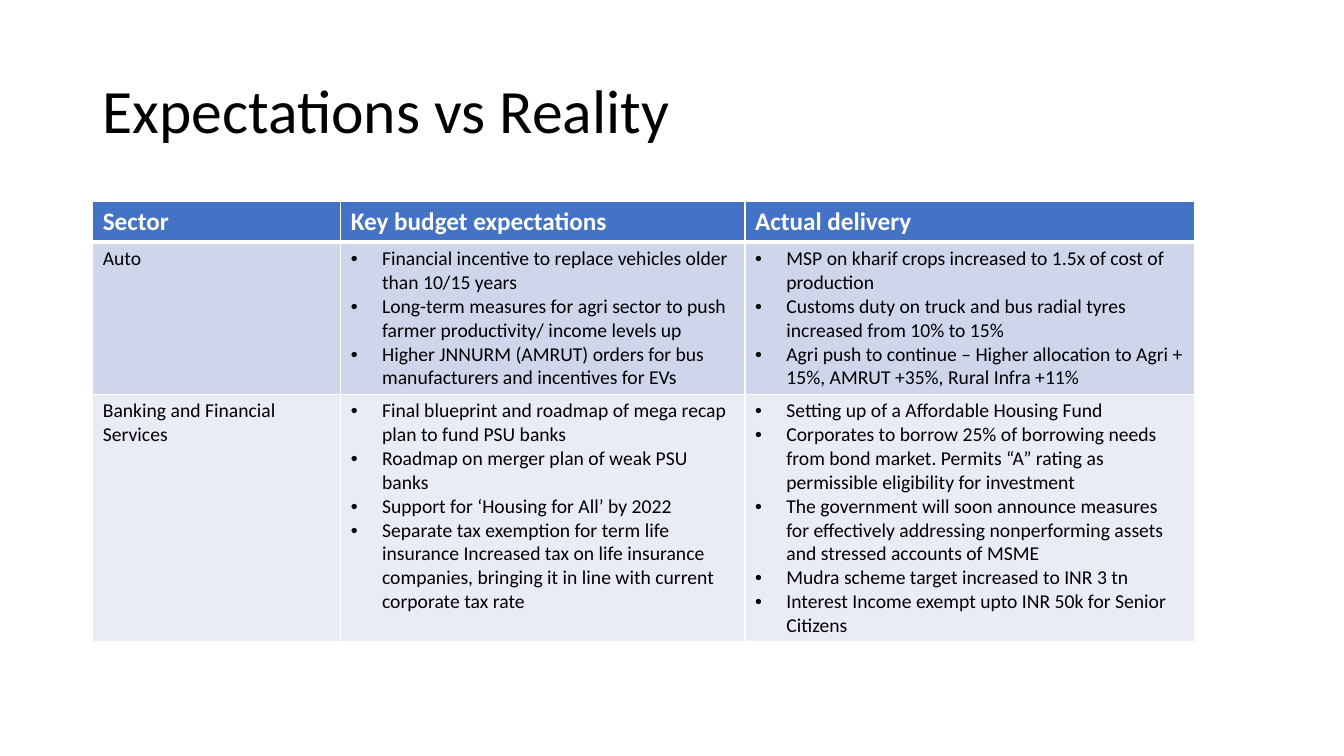
from lxml.etree import SubElement
from pptx import Presentation
from pptx.dml.color import RGBColor
from pptx.enum.text import MSO_ANCHOR
from pptx.oxml.ns import qn
from pptx.util import Inches, Pt

COLORS = {
    "text": "000000",
    "white": "FFFFFF",
    "header": "4472C4",
    "band_dark": "CFD5EA",
    "band_light": "E9EBF5",
}
FORMATS = {
    "title": {"size": Pt(44), "bold": False},
    "header": {"size": Pt(18), "bold": True},
    "body": {"size": Pt(14), "bold": False},
}
COLUMN_WIDTHS = [2.46, 4.01, 4.46]
ROW_HEIGHTS = [0.4, 1.51, 2.45]
ROW_FILLS = ["header", "band_dark", "band_light"]
BULLET_INDENT = Inches(0.31)

ROWS = [
    [["Sector"], ["Key budget expectations"], ["Actual delivery"]],
    [
        ["Auto"],
        [
            "Financial incentive to replace vehicles older than 10/15 years",
            "Long-term measures for agri sector to push farmer productivity/ income levels up",
            "Higher JNNURM (AMRUT) orders for bus manufacturers and incentives for EVs",
        ],
        [
            "MSP on kharif crops increased to 1.5x of cost of production",
            "Customs duty on truck and bus radial tyres increased from 10% to 15%",
            "Agri push to continue – Higher allocation to Agri + 15%, AMRUT +35%, Rural Infra +11%",
        ],
    ],
    [
        ["Banking and Financial", "Services"],
        [
            "Final blueprint and roadmap of mega recap plan to fund PSU banks",
            "Roadmap on merger plan of weak PSU banks",
            "Support for ‘Housing for All’ by 2022",
            "Separate tax exemption for term life insurance Increased tax on life insurance "
            "companies, bringing it in line with current corporate tax rate",
        ],
        [
            "Setting up of a Affordable Housing Fund",
            "Corporates to borrow 25% of borrowing needs from bond market. "
            "Permits “A” rating as permissible eligibility for investment",
            "The government will soon announce measures for effectively addressing "
            "nonperforming assets and stressed accounts of MSME",
            "Mudra scheme target increased to INR 3 tn",
            "Interest Income exempt upto INR 50k for Senior Citizens",
        ],
    ],
]


class SlideBuilder:
    def __init__(self, page, font_name):
        self.page = page
        self.font_name = font_name

    def add_lines(self, frame, lines, style, color, bulleted=False):
        for index, line in enumerate(lines):
            para = frame.add_paragraph() if index else frame.paragraphs[0]
            span = para.add_run()
            span.text = line
            for name, value in {"name": self.font_name, **FORMATS[style]}.items():
                setattr(span.font, name, value)
            span.font.color.rgb = RGBColor.from_string(COLORS[color])
            if bulleted:
                self.add_bullet(para)

    def add_bullet(self, para):
        properties = para._p.get_or_add_pPr()
        properties.set("marL", str(BULLET_INDENT))
        properties.set("indent", str(-BULLET_INDENT))
        SubElement(properties, qn("a:buFont"), typeface="Arial")
        SubElement(properties, qn("a:buChar"), char="•")

    def add_title(self, text, left, top, width, height):
        box = self.page.shapes.add_textbox(
            Inches(left), Inches(top), Inches(width), Inches(height))
        frame = box.text_frame
        frame.word_wrap = True
        frame.vertical_anchor = MSO_ANCHOR.MIDDLE
        self.add_lines(frame, [text], "title", "text")
        frame.paragraphs[0].line_spacing = 0.9

    def add_borders(self, cell, bottom_width):
        properties = cell._tc.get_or_add_tcPr()
        for side, width in {"L": 1, "R": 1, "T": 1, "B": bottom_width}.items():
            line = SubElement(properties, qn(f"a:ln{side}"), w=str(Pt(width)))
            fill = SubElement(line, qn("a:solidFill"))
            SubElement(fill, qn("a:srgbClr"), val=COLORS["white"])

    def add_table(self, rows, left, top):
        table = self.page.shapes.add_table(
            len(rows), len(COLUMN_WIDTHS), Inches(left), Inches(top),
            Inches(sum(COLUMN_WIDTHS)), Inches(sum(ROW_HEIGHTS))).table
        for column, width in zip(table.columns, COLUMN_WIDTHS):
            column.width = Inches(width)
        for row, height in zip(table.rows, ROW_HEIGHTS):
            row.height = Inches(height)
        for row_index, row in enumerate(rows):
            is_header = row_index == 0
            for column_index, lines in enumerate(row):
                cell = table.cell(row_index, column_index)
                # The rule under the header is heavier
                self.add_borders(cell, 3 if is_header else 1)
                cell.fill.solid()
                cell.fill.fore_color.rgb = RGBColor.from_string(COLORS[ROW_FILLS[row_index]])
                self.add_lines(
                    cell.text_frame, lines,
                    "header" if is_header else "body",
                    "white" if is_header else "text",
                    bulleted=not is_header and column_index > 0)


def main():
    deck = Presentation()
    deck.slide_width, deck.slide_height = Inches(13.33), Inches(7.5)
    page = deck.slides.add_slide(deck.slide_layouts[6])
    builder = SlideBuilder(page, "Calibri")

    # Title
    builder.add_title("Expectations vs Reality", 0.92, 0.4, 11.5, 1.45)

    # Sector comparison
    builder.add_table(ROWS, 0.92, 2)

    deck.save("out.pptx")


if __name__ == "__main__":
    main()
